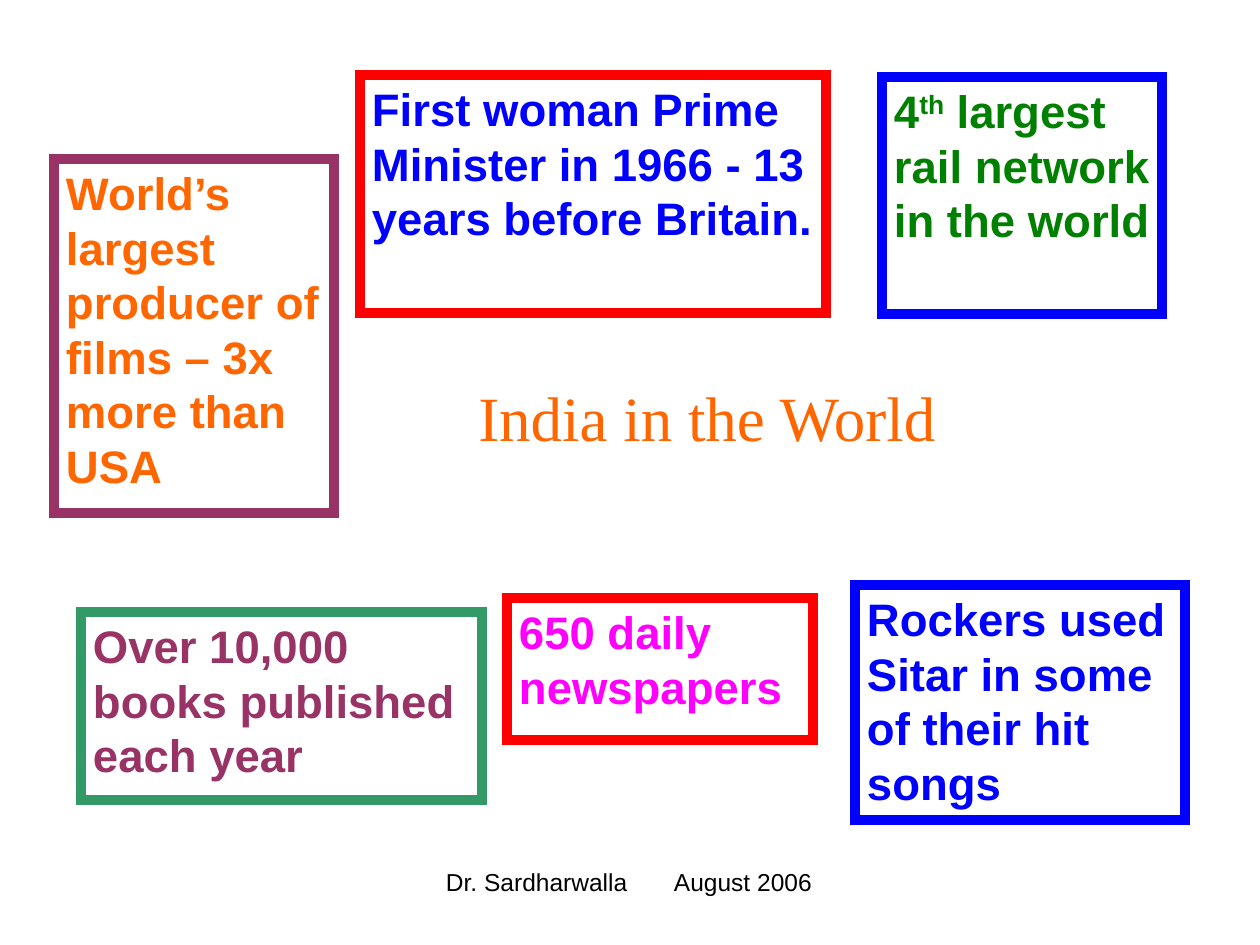
from lxml.etree import SubElement
from pptx import Presentation
from pptx.dml.color import RGBColor
from pptx.enum.shapes import MSO_SHAPE as Shape
from pptx.enum.text import MSO_ANCHOR as Anchor, MSO_AUTO_SIZE as AutoSize, PP_ALIGN as Align
from pptx.oxml.ns import qn
from pptx.util import Emu, Pt

SCALE = 914400 / 126
INSET = (12, 6, 12, 6)

FACTS = [
    ((54, 159, 280, 354), "FFFFFF", "993366", "FF6600",
     ["World’s largest producer of films – 3x more than USA"]),
    ((360, 75, 466, 238), None, "FF0000", "0000FF",
     ["First woman Prime Minister in 1966 - 13 years before Britain."]),
    ((882, 77, 280, 237), "FFFFFF", "0000FF", "008000",
     ["4", "th", " largest rail network in the world"]),
    ((507, 598, 306, 142), "FFFFFF", "FF0000", "FF00FF", ["650 daily newspapers"]),
    ((81, 612, 401, 188), "FFFFFF", "339966", "993366",
     ["Over 10,000 books published each year"]),
    ((855, 585, 330, 235), "FFFFFF", "0000FF", "0000FF",
     ["Rockers used Sitar in some of their hit songs"]),
]


def px(length):
    """Turn a length in px into EMU."""
    return Emu(round(length * SCALE))


def color(value):
    """Turn a hex string into a colour."""
    return RGBColor.from_string(value)


def apply(target, values):
    """Set each attribute of the target from a dict."""
    for name, value in values.items():
        setattr(target, name, value)


def set_frame(frame, inset=INSET):
    """Give a text frame wrapping, top anchoring and insets."""
    sides = ("margin_left", "margin_top", "margin_right", "margin_bottom")
    apply(frame, {"word_wrap": True, "auto_size": AutoSize.NONE,
                  "vertical_anchor": Anchor.TOP, **dict(zip(sides, map(px, inset)))})


def write(para, parts, size, face, ink, bold=False):
    """Write the parts as runs, raising an ordinal suffix."""
    for part in parts:
        span = para.add_run()
        span.text = part
        apply(span.font, {"size": Pt(size), "name": face, "bold": bold})
        span.font.color.rgb = color(ink)
        if part == "th":
            span._r.get_or_add_rPr().set("baseline", "30000")


def add_title(page, box):
    """Place the title in the middle of the page."""
    title = page.shapes.title
    apply(title, dict(zip(("left", "top", "width", "height"), map(px, box))))
    set_frame(title.text_frame, (12, 14, 12, 6))
    para = title.text_frame.paragraphs[0]
    para.alignment = Align.CENTER
    write(para, ["India in the World"], 36, "Times New Roman", "FF6600")


def add_fact(page, box, fill, border, ink, parts):
    """Place one framed fact."""
    card = page.shapes.add_shape(Shape.RECTANGLE, *map(px, box))
    card.shadow.inherit = False
    if fill:
        card.fill.solid()
        card.fill.fore_color.rgb = color(fill)
    else:
        card.fill.background()
    card.line.color.rgb = color(border)
    card.line.width = Pt(6)
    SubElement(card.line._get_or_add_ln(), qn("a:miter"), lim="800000")
    set_frame(card.text_frame)
    para = card.text_frame.paragraphs[0]
    apply(para, {"alignment": Align.LEFT, "line_spacing": Pt(31.2)})
    write(para, parts, 26, "Arial", ink, bold=True)


def add_credit(page, box):
    """Place the author and date, parted by a tab stop."""
    credit = page.shapes.add_textbox(*map(px, box))
    set_frame(credit.text_frame, (15, 6, 12, 6))
    para = credit.text_frame.paragraphs[0]
    stops = SubElement(para._p.get_or_add_pPr(), qn("a:tabLst"))
    SubElement(stops, qn("a:tab"), pos=str(px(228)), algn="l")
    write(para, ["Dr. Sardharwalla\tAugust 2006"], 14, "Arial", "000000")


def main():
    """Build the deck and save it."""
    deck = Presentation()
    apply(deck, {"slide_width": px(1260), "slide_height": px(945)})
    page = deck.slides.add_slide(deck.slide_layouts[5])
    add_credit(page, (431, 861, 399, 66))
    add_title(page, (401, 364, 612, 207))
    for fact in FACTS:
        add_fact(page, *fact)
    deck.save("out.pptx")


if __name__ == "__main__":
    main()
